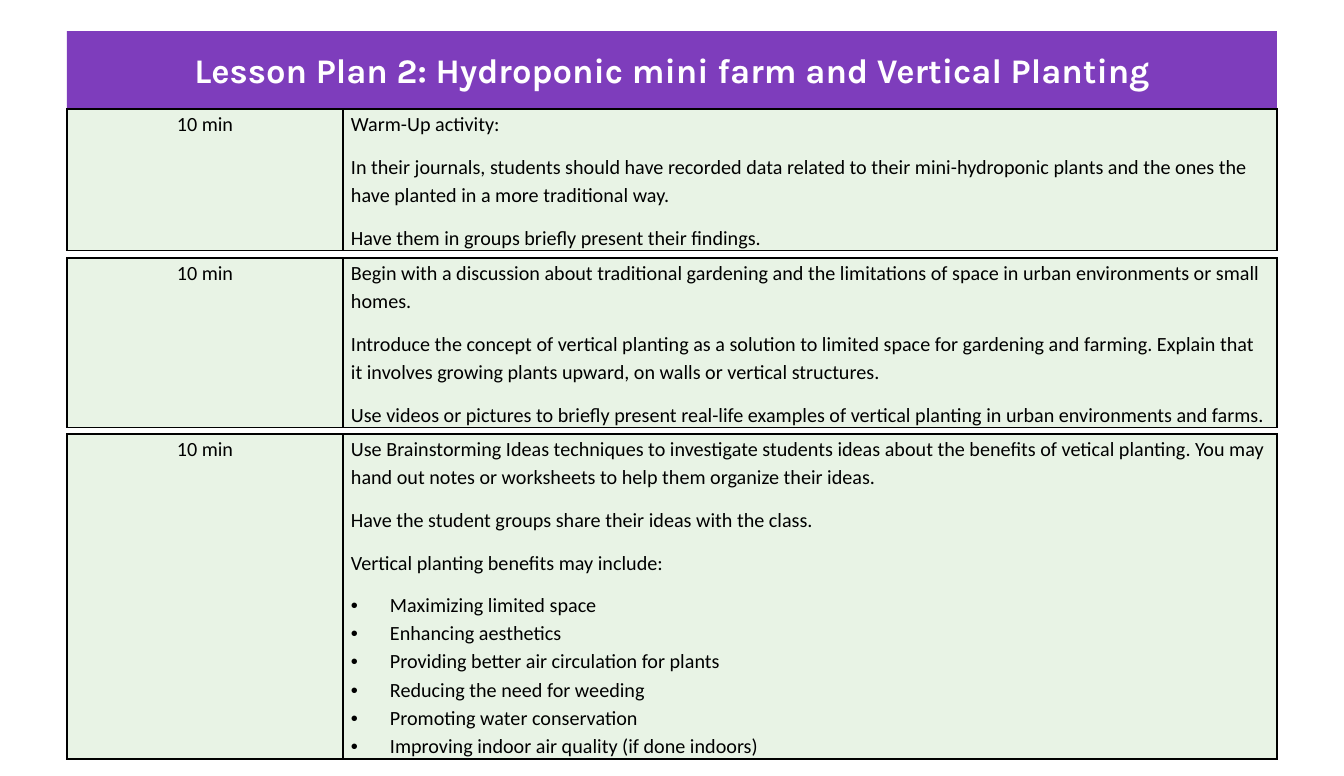
from lxml.etree import SubElement
from pptx import Presentation
from pptx.dml.color import RGBColor
from pptx.enum.text import MSO_ANCHOR, PP_ALIGN
from pptx.oxml.ns import qn
from pptx.util import Pt

# Content
TITLE = "Lesson Plan 2: Hydroponic mini farm and Vertical Planting"
# Each activity: top, height, duration, paragraphs, bullets
ACTIVITIES = [
    (109, 141, "10 min", [
        "Warm-Up activity:",
        "In their journals, students should have recorded data related to their mini-hydroponic plants and the ones the have planted in a more traditional way.",
        "Have them in groups briefly present their findings.",
    ], []),
    (258, 169, "10 min", [
        "Begin with a discussion about traditional gardening and the limitations of space in urban environments or small homes.",
        "Introduce the concept of vertical planting as a solution to limited space for gardening and farming. Explain that it involves growing plants upward, on walls or vertical structures.",
        "Use videos or pictures to briefly present real-life examples of vertical planting in urban environments and farms.",
    ], []),
    (434, 325, "10 min", [
        "Use Brainstorming Ideas techniques to investigate students ideas about the benefits of vetical planting. You may hand out notes or worksheets to help them organize their ideas.",
        "Have the student groups share their ideas with the class.",
        "Vertical planting benefits may include:",
    ], [
        "Maximizing limited space",
        "Enhancing aesthetics",
        "Providing better air circulation for plants",
        "Reducing the need for weeding",
        "Promoting water conservation",
        "Improving indoor air quality (if done indoors)",
    ]),
]

# Layout and colours
PX = 8835
LEFT, TITLE_TOP, TITLE_HEIGHT = 67, 31, 78
COLUMNS = (276, 934)
CELL_MARGIN, BULLET_INDENT = 8, 39
PURPLE, PALE_GREEN, WHITE, BLACK = "7E3DBC", "E8F3E5", "FFFFFF", "000000"


def px(length):
    return length * PX


def color(value):
    return RGBColor.from_string(value)


def set_font(paragraph, name, size, value, bold=False):
    font = paragraph.font
    font.name, font.size, font.bold = name, Pt(size), bold
    font.color.rgb = color(value)


def add_bullet(paragraph):
    properties = paragraph._p.get_or_add_pPr()
    properties.set("marL", str(px(BULLET_INDENT)))
    properties.set("indent", str(-px(BULLET_INDENT)))
    SubElement(properties, qn("a:buFont"), typeface="Arial")
    SubElement(properties, qn("a:buChar"), char="•")


def style_cell(cell):
    properties = cell._tc.get_or_add_tcPr()
    for side in ("a:lnL", "a:lnR", "a:lnT", "a:lnB"):
        line = SubElement(properties, qn(side), w=str(Pt(1)))
        fill = SubElement(line, qn("a:solidFill"))
        SubElement(fill, qn("a:srgbClr"), val=BLACK)
    cell.fill.solid()
    cell.fill.fore_color.rgb = color(PALE_GREEN)
    cell.margin_left = cell.margin_right = px(CELL_MARGIN)
    cell.margin_top = cell.margin_bottom = 0


def fill_cell(cell, texts, bullets=(), alignment=PP_ALIGN.LEFT):
    style_cell(cell)
    frame = cell.text_frame
    lines = [*texts, *bullets]
    for index, text in enumerate(lines):
        paragraph = frame.add_paragraph() if index else frame.paragraphs[0]
        paragraph.text = text
        is_bullet = index >= len(texts)
        if is_bullet:
            add_bullet(paragraph)
        paragraph.alignment = alignment
        paragraph.line_spacing = 1.15
        is_last = index == len(lines) - 1
        paragraph.space_after = Pt(0 if is_bullet and not is_last else 10)
        set_font(paragraph, "Calibri", 14, BLACK)


presentation = Presentation()
presentation.slide_width, presentation.slide_height = px(1344), px(776)
slide = presentation.slides.add_slide(presentation.slide_layouts[5])

# Title band
title = slide.shapes.title
title.left, title.top = px(LEFT), px(TITLE_TOP)
title.width, title.height = px(sum(COLUMNS)), px(TITLE_HEIGHT)
title.fill.solid()
title.fill.fore_color.rgb = color(PURPLE)
title.text_frame.text = TITLE
title.text_frame.vertical_anchor = MSO_ANCHOR.MIDDLE
heading = title.text_frame.paragraphs[0]
heading.alignment = PP_ALIGN.CENTER
set_font(heading, "Karla", 24, WHITE, bold=True)

# One table per activity
for top, height, duration, texts, bullets in ACTIVITIES:
    table = slide.shapes.add_table(
        1, 2, px(LEFT), px(top), px(sum(COLUMNS)), px(height)).table
    table.first_row = table.horz_banding = False
    for column, width in zip(table.columns, COLUMNS):
        column.width = px(width)
    fill_cell(table.cell(0, 0), [duration], alignment=PP_ALIGN.CENTER)
    fill_cell(table.cell(0, 1), texts, bullets)

presentation.save("out.pptx")
